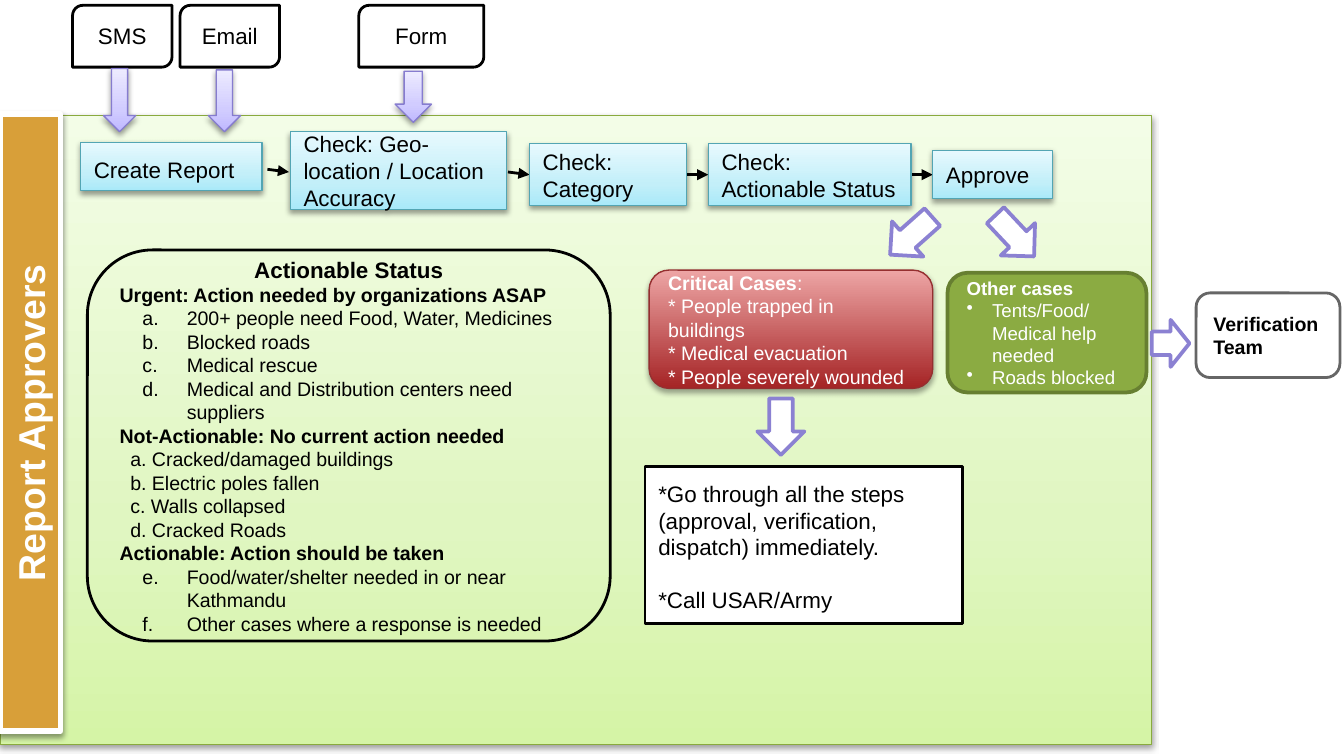
from dataclasses import dataclass
from typing import Optional, Union

from lxml.etree import SubElement
from pptx import Presentation
from pptx.dml.color import RGBColor
from pptx.enum.shapes import MSO_CONNECTOR as CONN, MSO_SHAPE as SHAPE
from pptx.enum.text import MSO_ANCHOR as ANCHOR, PP_ALIGN as ALIGN
from pptx.oxml.ns import qn
from pptx.util import Emu, Inches, Pt

COLS, ROWS = 100, 56.25
Area = tuple[float, float, float, float]
Paint = Union[str, tuple[tuple[int, str], ...], None]


@dataclass(frozen=True)
class Theme:
    font: str = "Arial"
    title: float = 20
    body: float = 12
    detail: float = 10.5
    small: float = 10
    black: str = "000000"
    white: str = "FFFFFF"
    inset: float = 0.1


T = Theme()


@dataclass(frozen=True)
class Style:
    fill: Paint
    line: str
    width: float
    shadow: Optional[tuple[int, float]] = None
    geom: SHAPE = SHAPE.RECTANGLE
    size: float = T.body
    color: str = T.black
    anchor: ANCHOR = ANCHOR.MIDDLE


@dataclass(frozen=True)
class Para:
    runs: tuple[tuple[str, bool], ...]
    align: ALIGN = ALIGN.LEFT
    size: Optional[float] = None
    left: float = 0
    hang: float = 0
    bullet: str = ""
    start: int = 0
    before: float = 0


SOFT, DEEP = (38, 1.6), (35, 1.8)
PANEL = Style(((0, "D5F4A6"), (35, "E0F6C1"), (100, "F3FDE7")), "89AA3E", 0.75, SOFT)
SOURCE = Style(T.white, T.black, 1.5, geom=SHAPE.ROUND_2_DIAG_RECTANGLE, anchor=ANCHOR.TOP)
STEP = Style(((0, "A9E9F9"), (35, "C3EFF9"), (100, "E7F9FE")), "53A5B3", 0.75, SOFT)
FIRST_STEP = Style(STEP.fill, STEP.line, STEP.width, SOFT, anchor=ANCHOR.TOP)
BANNER = Style("D89F39", T.white, 3, SOFT, size=T.title, color=T.white)
TEAM = Style(None, "666666", 1.5, geom=SHAPE.ROUNDED_RECTANGLE, size=T.detail)
CRITICAL = Style(((0, "A52425"), (100, "EDA5A5")), "952F30", 0.75, DEEP,
                 SHAPE.ROUNDED_RECTANGLE, T.detail, T.white)
STATUS = Style(None, T.black, 1.5, geom=SHAPE.ROUNDED_RECTANGLE, size=T.detail)
OTHER = Style("8BAB42", "677F31", 2, geom=SHAPE.ROUNDED_RECTANGLE, size=T.small, color=T.white)
ACTION = Style(T.white, T.black, 1.5, anchor=ANCHOR.TOP)
BRANCH = Style(T.white, "8B81D2", 2, geom=SHAPE.RIGHT_ARROW)
INTAKE = Style(((0, "BFB8FF"), (35, "D1CCFF"), (100, "EDEBFF")), "867CCF", 0.75, SOFT,
               SHAPE.DOWN_ARROW)


def plain(text: str, **kw) -> Para:
    return Para(((text, False),), **kw)


def bold(text: str, **kw) -> Para:
    return Para(((text, True),), **kw)


def lettered(start: int, *texts: str) -> list[Para]:
    return [plain(t, left=0.5, hang=0.33, start=start) for t in texts]


def dotted(*texts: str) -> list[Para]:
    return [plain(t, left=0.19, hang=0.19, bullet="•") for t in texts]


def paint(sp, fill: Paint) -> None:
    if fill is None:
        sp.fill.background()
    elif isinstance(fill, str):
        sp.fill.solid()
        sp.fill.fore_color.rgb = RGBColor.from_string(fill)
    else:
        sp.fill.gradient()
        sp.fill.gradient_angle = 90
        stops = sp._element.spPr.find(".//" + qn("a:gsLst"))
        for gs in list(stops):
            stops.remove(gs)
        for share, color in fill:
            gs = SubElement(stops, qn("a:gs"), pos=str(share * 1000))
            SubElement(gs, qn("a:srgbClr"), val=color)


def cast_shadow(sp, alpha: int, dist: float) -> None:
    effects = sp._element.spPr.find(qn("a:effectLst"))
    shadow = SubElement(effects, qn("a:outerShdw"), blurRad=str(Pt(3.1)),
                        dist=str(Pt(dist)), dir="5400000", rotWithShape="0")
    color = SubElement(shadow, qn("a:srgbClr"), val=T.black)
    SubElement(color, qn("a:alpha"), val=str(alpha * 1000))


def write(tf, paras: list[Para], st: Style) -> None:
    tf.word_wrap = True
    tf.vertical_anchor = st.anchor
    tf.margin_left = tf.margin_right = tf.margin_top = tf.margin_bottom = Inches(T.inset)
    for i, para in enumerate(paras):
        p = tf.add_paragraph() if i else tf.paragraphs[0]
        p.alignment = para.align
        p.space_before = Pt(para.before)
        pr = p._p.get_or_add_pPr()
        pr.set("marL", str(Inches(para.left)))
        pr.set("indent", str(-Inches(para.hang)))
        if para.bullet:
            SubElement(pr, qn("a:buChar"), char=para.bullet)
        elif para.start:
            SubElement(pr, qn("a:buAutoNum"), type="alphaLcPeriod", startAt=str(para.start))
        for text, is_bold in para.runs:
            r = p.add_run()
            r.text = text
            r.font.name, r.font.bold = T.font, is_bold
            r.font.size = Pt(para.size or st.size)
            r.font.color.rgb = RGBColor.from_string(st.color)


def draw(s, prs, area: Area, st: Style, *paras: Para, turn: float = 0) -> None:
    col, row, w, h = area
    dx, dy = prs.slide_width / COLS, prs.slide_height / ROWS
    sp = s.shapes.add_shape(st.geom, Emu(round(col * dx)), Emu(round(row * dy)),
                            Emu(round(w * dx)), Emu(round(h * dy)))
    sp.rotation = turn
    paint(sp, st.fill)
    sp.line.color.rgb = RGBColor.from_string(st.line)
    sp.line.width = Pt(st.width)
    sp.shadow.inherit = False
    if st.shadow:
        cast_shadow(sp, *st.shadow)
    if paras:
        write(sp.text_frame, list(paras), st)


def link(s, prs, x1: float, y1: float, x2: float, y2: float) -> None:
    dx, dy = prs.slide_width / COLS, prs.slide_height / ROWS
    cx = s.shapes.add_connector(CONN.STRAIGHT, Emu(round(x1 * dx)), Emu(round(y1 * dy)),
                                Emu(round(x2 * dx)), Emu(round(y2 * dy)))
    cx.line.color.rgb = RGBColor.from_string(T.black)
    cx.line.width = Pt(1.5)
    SubElement(cx.line._get_or_add_ln(), qn("a:tailEnd"), type="triangle")
    SubElement(cx._element.spPr, qn("a:effectLst"))


def main() -> None:
    prs = Presentation()
    prs.slide_width, prs.slide_height = Inches(10), Inches(5.625)
    s = prs.slides.add_slide(prs.slide_layouts[6])

    draw(s, prs, (0, 8.6, 85.7, 46.8), PANEL)
    for name, col, w in (("SMS", 5.4, 7.4), ("Email", 13.4, 7.4), ("Form", 26.7, 9.3)):
        draw(s, prs, (col, 0.4, w, 4.6), SOURCE, plain(name, align=ALIGN.CENTER))
    for ends in ((37.8, 12.8, 39.4, 13), (51, 13, 52.7, 13), (67.7, 13, 69.4, 13)):
        link(s, prs, *ends)
    draw(s, prs, (89, 21.8, 10.7, 6.3), TEAM, bold("Verification Team"))
    for col, turn in ((65.7, 138.3), (73.4, 46.7)):
        draw(s, prs, (col, 15.8, 4.2, 3.5), BRANCH, turn=turn)

    for name, area, st in (
        ("Check: Geo-location / Location Accuracy", (21.6, 9.8, 16.1, 5.8), STEP),
        ("Create Report", (6, 10.6, 13.5, 3.6), FIRST_STEP),
        ("Check: Category", (39.4, 10.7, 11.7, 4.6), STEP),
        ("Check: Actionable Status", (52.7, 10.7, 15.1, 4.6), STEP),
        ("Approve", (69.4, 11.2, 8.9, 3.6), STEP),
    ):
        draw(s, prs, area, st, plain(name))
    draw(s, prs, (-20.7, 29.2, 45.9, 4.5), BANNER,
         bold("Report Approvers", align=ALIGN.CENTER), turn=270)

    draw(s, prs, (48, 34.7, 23.6, 11.7), ACTION,
         plain("*Go through all the steps (approval, verification, dispatch) immediately."),
         plain("*Call USAR/Army", before=14))
    draw(s, prs, (48.3, 20.1, 21.1, 8.8), CRITICAL,
         Para((("Critical Cases", True), (":", False))),
         *map(plain, ("* People trapped in buildings", "* Medical evacuation",
                      "* People severely wounded")))
    draw(s, prs, (6.5, 18.6, 38.9, 29.1), STATUS,
         bold("Actionable Status", align=ALIGN.CENTER, size=T.body),
         bold("Urgent: Action needed by organizations ASAP"),
         *lettered(1, "200+ people need Food, Water, Medicines", "Blocked roads",
                   "Medical rescue", "Medical and Distribution centers need suppliers"),
         bold("Not-Actionable: No current action needed"),
         *(plain(t, left=0.08) for t in ("a. Cracked/damaged buildings",
                                         "b. Electric poles fallen",
                                         "c. Walls collapsed", "d. Cracked Roads")),
         bold("Actionable: Action should be taken"),
         *lettered(5, "Food/water/shelter needed in or near Kathmandu",
                   "Other cases where a response is needed"))
    draw(s, prs, (70.5, 20.3, 14.8, 8.9), OTHER, bold("Other cases"),
         *dotted("Tents/Food/Medical help needed", "Roads blocked"))

    draw(s, prs, (56, 30, 4.2, 3.5), BRANCH, turn=90)
    draw(s, prs, (85.7, 23.8, 2.8, 3.5), BRANCH)
    for area in ((7.7, 5.1, 2.4, 4.7), (29.4, 5.3, 2.7, 3.8), (15.5, 5.2, 2.4, 4.6)):
        draw(s, prs, area, INTAKE)
    link(s, prs, 19.9, 12.6, 21.5, 12.8)
    prs.save("out.pptx")


if __name__ == "__main__":
    main()
